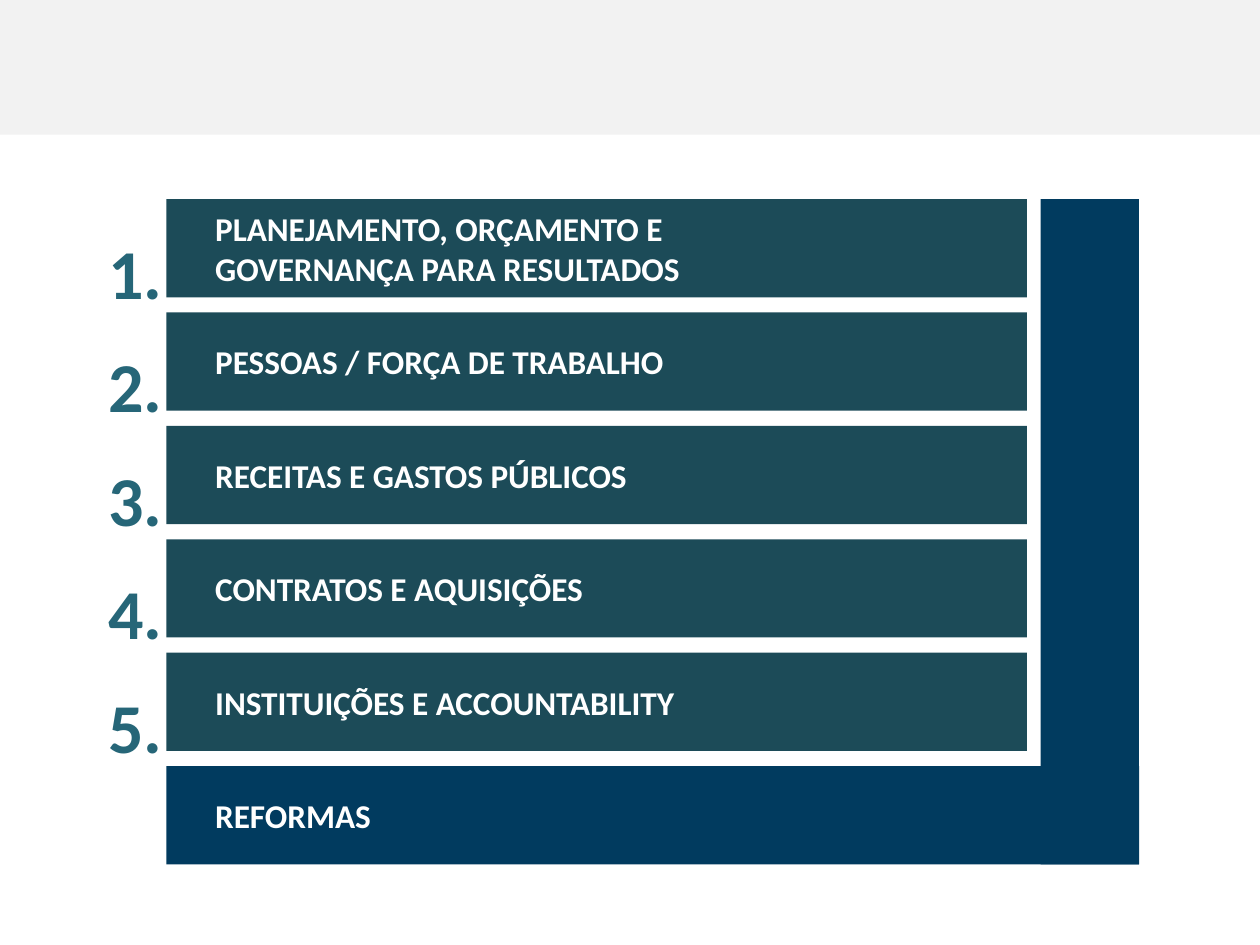
import pptx
import pptx.util
import pptx.dml.color
import pptx.enum.shapes
import pptx.enum.text

Inches = pptx.util.Inches

TEAL, NAVY, AQUA = "1C4B58", "013B5F", "266678"
TOP, PITCH, BAR = 1.58, 0.9, 0.78
LEFT, RIGHT = 1.32, 9.04

# label and the width of its text box
THEMES = [
    ("PLANEJAMENTO, ORÇAMENTO E\vGOVERNANÇA PARA RESULTADOS", 3.93),
    ("PESSOAS / FORÇA DE TRABALHO", 3.8),
    ("RECEITAS E GASTOS PÚBLICOS", 3.51),
    ("CONTRATOS E AQUISIÇÕES", 3.21),
    ("INSTITUIÇÕES E ACCOUNTABILITY", 3.89),
]


def color(code):
    return pptx.dml.color.RGBColor.from_string(code)


def write(frame, text, size=19, fill="FFFFFF", bold=True, face="Calibri"):
    frame.word_wrap = False
    frame.vertical_anchor = pptx.enum.text.MSO_ANCHOR.MIDDLE
    para = frame.paragraphs[0]
    para.text = text
    for run in para.runs:
        font = run.font
        font.name, font.size, font.bold = face, pptx.util.Pt(size), bold
        font.color.rgb = color(fill)


class Deck:
    def __init__(self):
        self.show = pptx.Presentation()
        self.show.slide_width = Inches(10)
        self.show.slide_height = Inches(7.5)
        self.slide = self.show.slides.add_slide(self.show.slide_layouts[6])

    def block(self, left, top, width, height, fill):
        shape = self.slide.shapes.add_shape(
            pptx.enum.shapes.MSO_SHAPE.RECTANGLE,
            Inches(left), Inches(top), Inches(width), Inches(height))
        shape.shadow.inherit = False
        shape.fill.solid()
        shape.fill.fore_color.rgb = color(fill)
        shape.line.fill.background()

    def text(self, text, left, top, width, height, **style):
        box = self.slide.shapes.add_textbox(
            Inches(left), Inches(top), Inches(width), Inches(height))
        write(box.text_frame, text, **style)

    def label(self, text, top, width):
        """Write a label centred on the height of the bar at top."""
        high = 0.42 + 0.32 * text.count("\v")
        self.text(text, 1.61, top + (BAR - high) / 2, width, high)


def main():
    deck = Deck()
    deck.block(0, 0, 10, 1.07, "F2F2F2")
    for i, (name, width) in enumerate(THEMES):
        top = TOP + i * PITCH
        deck.block(LEFT, top, 6.83, BAR, TEAL)
        deck.label(name, top, width)
        deck.text(f"{i + 1}.", 0.76, top + 0.19, 0.63, 0.77,
                  size=40, fill=AQUA)

    # The base bar and the upright bar join in an L shape.
    span = len(THEMES) * PITCH
    deck.block(LEFT, TOP + span, RIGHT - LEFT, BAR, NAVY)
    deck.label("REFORMAS", TOP + span, 1.46)
    deck.block(RIGHT - BAR, TOP, BAR, span + BAR, NAVY)
    deck.show.save("out.pptx")


if __name__ == "__main__":
    main()
